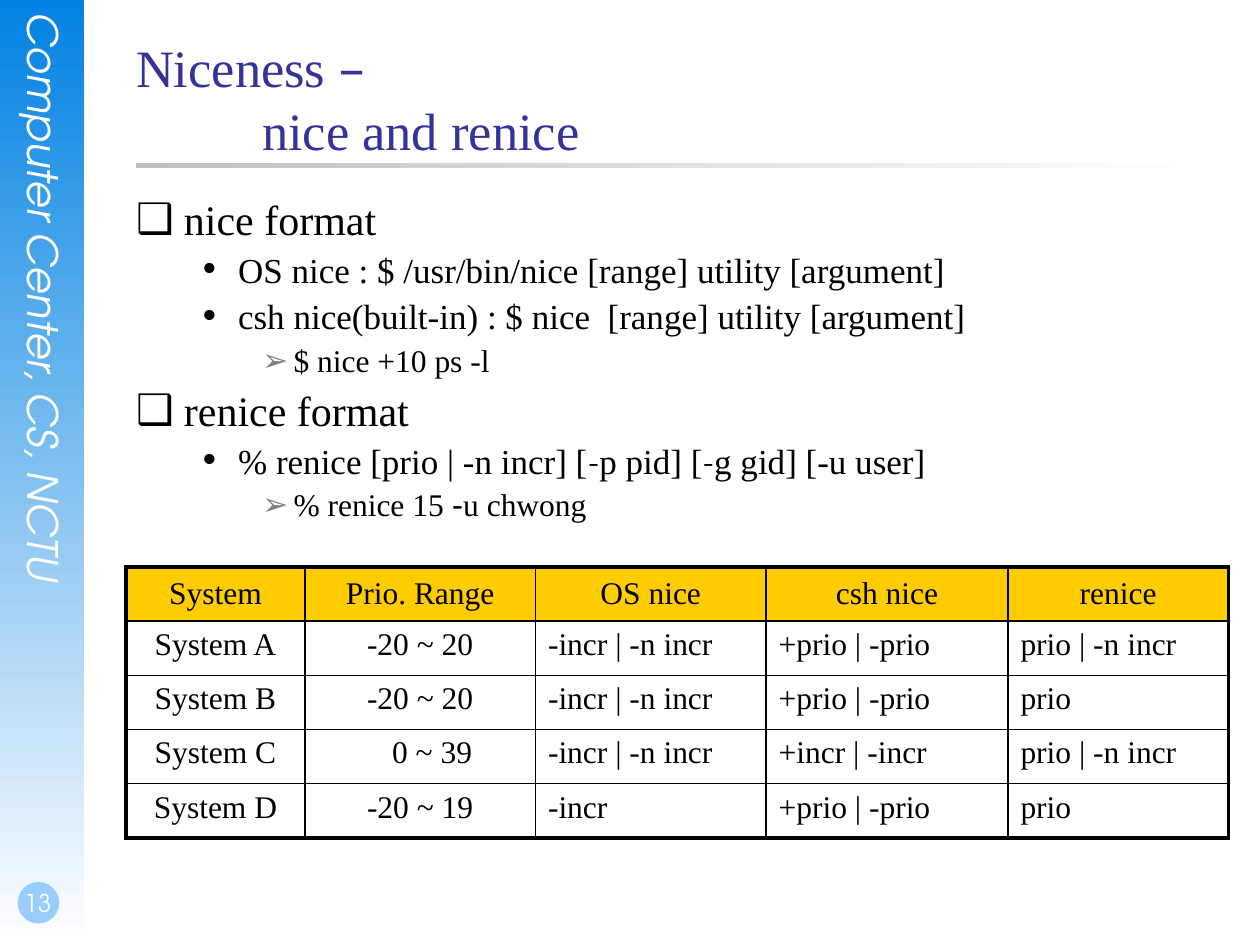
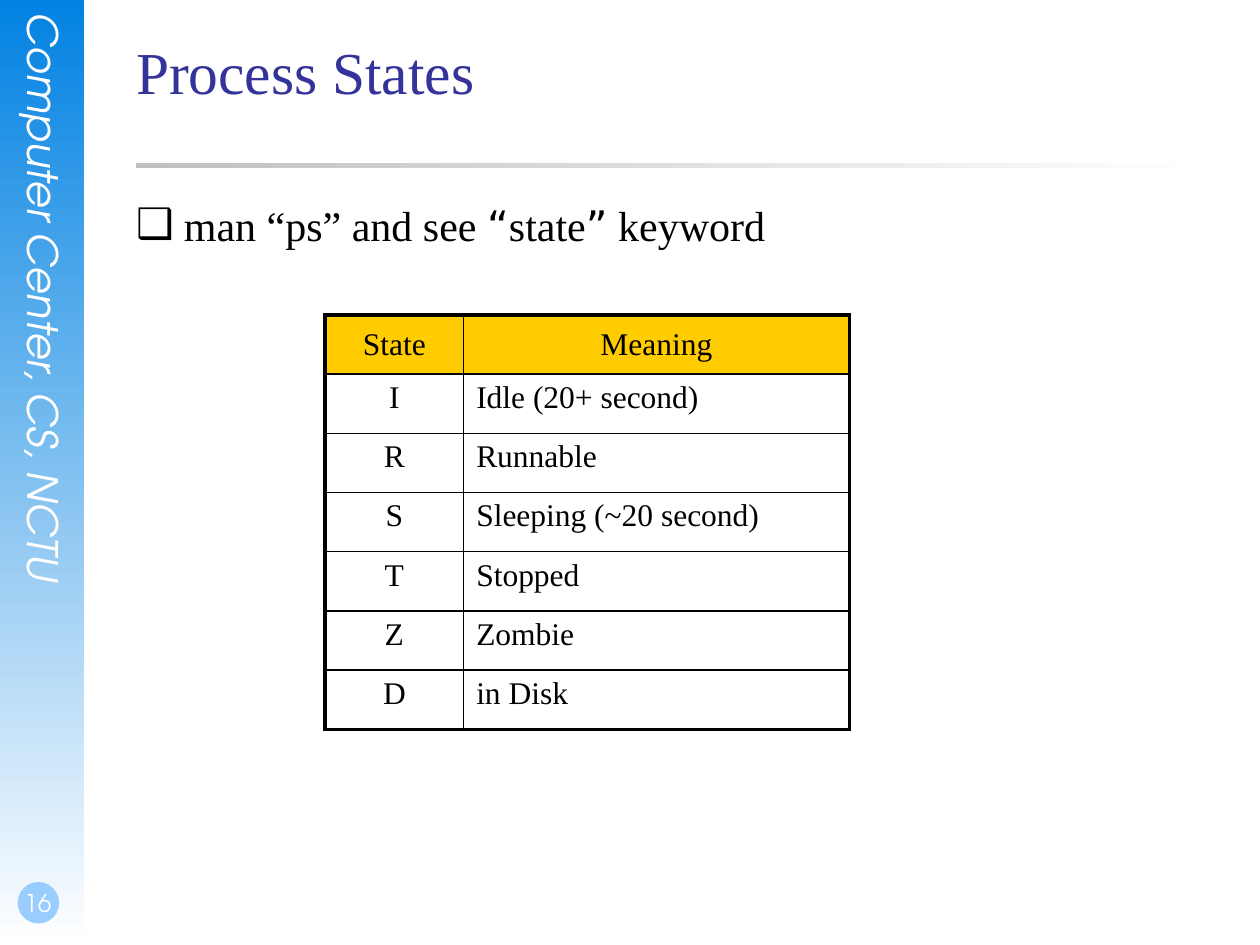
from lxml import etree
from pptx import Presentation
from pptx.dml.color import RGBColor
from pptx.enum.shapes import MSO_SHAPE
from pptx.enum.text import MSO_ANCHOR, MSO_AUTO_SIZE, PP_ALIGN
from pptx.oxml.ns import qn
from pptx.util import Inches, Pt

RECTANGLE, OVAL = MSO_SHAPE.RECTANGLE, MSO_SHAPE.OVAL
TOP, MIDDLE, BOTTOM = MSO_ANCHOR.TOP, MSO_ANCHOR.MIDDLE, MSO_ANCHOR.BOTTOM
CENTER, LEFT = PP_ALIGN.CENTER, PP_ALIGN.LEFT
NO_FIT, GROW = MSO_AUTO_SIZE.NONE, MSO_AUTO_SIZE.SHAPE_TO_FIT_TEXT

COLORS = {
    "band": "0282E2", "badge": "99CCFF", "rule": "C0C0C0", "white": "FFFFFF",
    "title": "333399", "text": "000000", "header": "FFCC00", "arrow": "808080",
}
SERIF, SANS, DASH, BAND_FONT = "Times New Roman", "DejaVu Sans", "Cambria", "TeX Gyre Adventor"
LEVELS = [
    {"size": 24, "margin": 0.38, "hang": 0.38, "bullet": "❑", "bullet_color": "text"},
    {"size": 20, "margin": 0.81, "hang": 0.31, "bullet": "•", "bullet_color": "text"},
    {"size": 18, "margin": 1.25, "hang": 0.25, "bullet": "➢", "bullet_color": "arrow"},
]
CONTENT_LEFT = 1.08


def rgb(name):
    return RGBColor.from_string(COLORS[name])


def inches(box):
    return [Inches(length) for length in box]


def add_xml(parent, tag, **attributes):
    return etree.SubElement(parent, qn(f"a:{tag}"), attributes)


def add_runs(paragraph, pieces, size, color="text", font=SERIF, italic=False):
    for piece in [pieces] if isinstance(pieces, str) else pieces:
        words, face = (piece, font) if isinstance(piece, str) else piece
        run = paragraph.add_run()
        run.text = words
        run.font.name, run.font.size, run.font.italic = face, Pt(size), italic
        run.font.color.rgb = rgb(color)


def space_before(paragraph):
    properties = paragraph._p.get_or_add_pPr()
    add_xml(add_xml(properties, "spcBef"), "spcPct", val="25000")
    return properties


def prepare_frame(frame, margins=(0, 0, 0, 0), anchor=TOP, fit=NO_FIT):
    frame.margin_left, frame.margin_top, frame.margin_right, frame.margin_bottom = inches(margins)
    frame.word_wrap, frame.vertical_anchor, frame.auto_size = True, anchor, fit
    return frame


def add_plain_shape(slide, kind, box, color, fade_angle=None):
    shape = slide.shapes.add_shape(kind, *inches(box))
    shape.shadow.inherit = False
    shape.line.fill.background()
    if fade_angle is None:
        shape.fill.solid()
        shape.fill.fore_color.rgb = rgb(color)
    else:
        shape.fill.gradient()
        shape.fill.gradient_angle = fade_angle
        for stop, name in zip(shape.fill.gradient_stops, (color, "white")):
            stop.color.rgb = rgb(name)


def add_side_band(slide, number, box=(0, 0, 0.67, 7.5)):
    left, top, _, height = box
    bottom = top + height
    add_plain_shape(slide, RECTANGLE, box, "band", 270)
    course = slide.shapes.add_textbox(*inches((left + 0.15, top + 0.1, 0.4, 5.11)))
    frame = prepare_frame(course.text_frame, fit=GROW)
    frame._txBody.bodyPr.set("vert", "eaVert")
    add_runs(frame.paragraphs[0], "Computer Center, CS, NCTU", 24, "white", BAND_FONT, True)
    add_plain_shape(slide, OVAL, (left + 0.14, bottom - 0.5, 0.33, 0.33), "badge")
    page = slide.shapes.add_textbox(*inches((left, bottom - 0.67, 0.58, 0.5)))
    frame = prepare_frame(page.text_frame, (0.02, 0, 0, 0.05), BOTTOM)
    frame.paragraphs[0].alignment = CENTER
    add_runs(frame.paragraphs[0], str(number), 14, "white", BAND_FONT)


def add_heading(slide, lines, size, box=(CONTENT_LEFT, 0.28, 8.5, 1.25)):
    left, top, width, _ = box
    add_plain_shape(slide, RECTANGLE, (left, top + 1.01, width, 0.04), "rule", 0)
    title = slide.shapes.title
    title.left, title.top, title.width, title.height = inches(box)
    paragraph = prepare_frame(title.text_frame).paragraphs[0]
    paragraph.alignment = LEFT
    paragraph._p.get_or_add_pPr().set("defTabSz", str(Inches(1)))
    for index, pieces in enumerate(lines):
        if index:
            paragraph.add_line_break()
            add_xml(paragraph._p[-1], "rPr", sz=str(size * 100))
        add_runs(paragraph, pieces, size, "title")


def add_bullets(slide, items, box, line_spacing=1.0):
    body = slide.placeholders[1]
    body.left, body.top, body.width, body.height = inches(box)
    frame = prepare_frame(body.text_frame)
    for index, (level, pieces) in enumerate(items):
        style = LEVELS[level]
        paragraph = frame.add_paragraph() if index else frame.paragraphs[0]
        paragraph.level = level
        paragraph.line_spacing = line_spacing
        properties = space_before(paragraph)
        properties.set("marL", str(Inches(style["margin"])))
        properties.set("indent", str(-Inches(style["hang"])))
        add_xml(add_xml(properties, "buClr"), "srgbClr", val=COLORS[style["bullet_color"]])
        add_xml(properties, "buFont", typeface=SANS)
        add_xml(properties, "buChar", char=style["bullet"])
        add_runs(paragraph, pieces, style["size"])


def draw_borders(cell, outer_sides):
    properties = cell._tc.get_or_add_tcPr()
    for side, outer in zip("LRTB", outer_sides):
        line = add_xml(properties, f"ln{side}", w=str(Pt(2.25 if outer else 1)))
        add_xml(add_xml(line, "solidFill"), "srgbClr", val=COLORS["text"])


def add_grid(slide, rows, origin, widths, row_height, centered_columns):
    last_row, last_column = len(rows) - 1, len(widths) - 1
    size = (sum(widths), row_height * len(rows))
    table = slide.shapes.add_table(len(rows), len(widths), *inches((*origin, *size))).table
    table.first_row = table.horz_banding = False
    for column, width in zip(table.columns, widths):
        column.width = Inches(width)
    for r, row in enumerate(rows):
        table.rows[r].height = Inches(row_height)
        for c, words in enumerate(row):
            cell = table.cell(r, c)
            draw_borders(cell, (c == 0, c == last_column, r == 0, r == last_row))
            if r == 0:
                cell.fill.solid()
                cell.fill.fore_color.rgb = rgb("header")
            else:
                cell.fill.background()
            cell.vertical_anchor = MIDDLE if r == 0 else TOP
            paragraph = cell.text_frame.paragraphs[0]
            paragraph.alignment = CENTER if r == 0 or c < centered_columns else LEFT
            space_before(paragraph)
            add_runs(paragraph, words, 18)
    return table


def start_slide(deck, number, title_lines, title_size):
    slide = deck.slides.add_slide(deck.slide_layouts[1])
    add_side_band(slide, number)
    add_heading(slide, title_lines, title_size)
    return slide


def build_niceness(deck):
    slide = start_slide(deck, 13, [["Niceness ", ("–", SANS)], "\tnice and renice"], 30)
    add_bullets(slide, [
        (0, "nice format"),
        (1, "OS nice : $ /usr/bin/nice [range] utility [argument]"),
        (1, "csh nice(built-in) : $ nice  [range] utility [argument]"),
        (2, "$ nice +10 ps -l"),
        (0, "renice format"),
        (1, ["% renice [prio | -n incr] [", ("-", DASH), "p pid] [", ("-", DASH),
             "g gid] [-u user]"]),
        (2, ["% renice 15 ", ("-", SANS), "u chwong"]),
    ], (CONTENT_LEFT, 1.58, 8.17, 3.25), 0.9)
    systems = add_grid(slide, [
        ["System", "Prio. Range", "OS nice", "csh nice", "renice"],
        ["System A", "-20 ~ 20", "-incr | -n incr", "+prio | -prio", "prio | -n incr"],
        ["System B", "-20 ~ 20", "-incr | -n incr", "+prio | -prio", "prio"],
        ["System C", "0 ~ 39", "-incr | -n incr", "+incr | -incr", "prio | -n incr"],
        ["System D", "-20 ~ 19", "-incr", "+prio | -prio", "prio"],
    ], (1, 4.5), (1.42, 1.83, 1.83, 1.92, 1.75), 0.43, 2)
    systems.cell(3, 1).margin_left = Inches(0.29)


def build_process_states(deck):
    slide = start_slide(deck, 16, ["Process States"], 34)
    add_bullets(slide, [
        (0, ["man “ps” and see ", ("“", SANS), "state", ("”", SANS), " keyword"]),
    ], (CONTENT_LEFT, 1.58, 8.5, 5.08))
    add_grid(slide, [
        ["State", "Meaning"],
        ["I", "Idle (20+ second)"],
        ["R", "Runnable"],
        ["S", "Sleeping (~20 second)"],
        ["T", "Stopped"],
        ["Z", "Zombie"],
        ["D", "in Disk"],
    ], (2.58, 2.5), (1.1, 3.06), 0.47, 1)


def main():
    deck = Presentation()
    deck.slide_width, deck.slide_height = Inches(10), Inches(7.5)
    build_niceness(deck)
    build_process_states(deck)
    deck.save("out.pptx")


if __name__ == "__main__":
    main()
